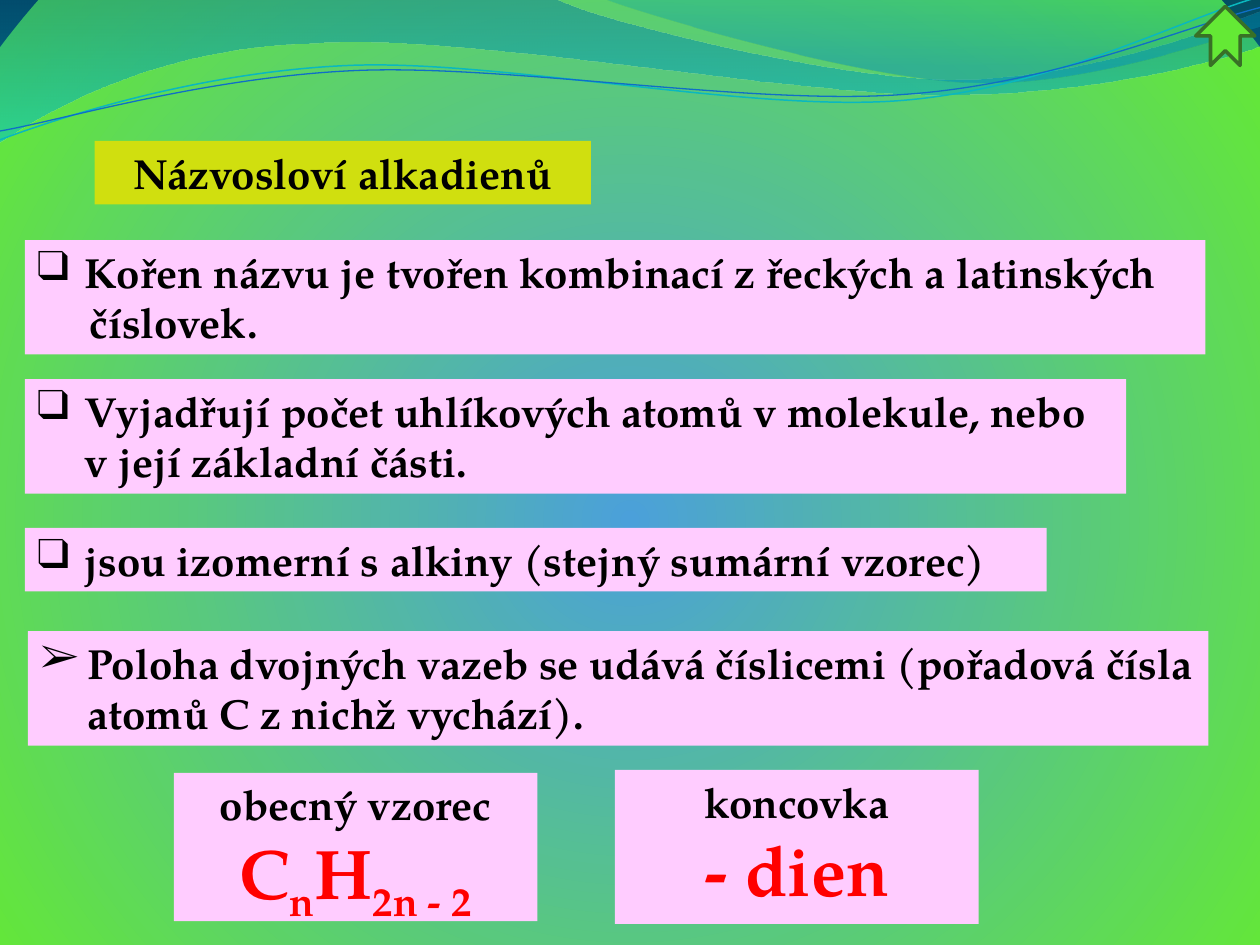
"""Builds the slide on the naming of alkadienes."""
from lxml import etree
from pptx import Presentation
from pptx.dml.color import RGBColor
from pptx.enum import shapes, text
from pptx.oxml import parse_xml
from pptx.oxml.ns import nsdecls, qn
from pptx.util import Pt

FONT = "TeX Gyre Pagella"
BLACK, RED, PINK, LIME, GREEN = "000000", "FF0000", "FFCCFF", "D0DF0F", "64E935"
INDENT = 27
SUBSCRIPT = -25000

TITLE = ("Názvosloví alkadienů", (54, 80.5, 283.7, 36.3))
RULES = [
    ("❑", ["Kořen názvu je tvořen kombinací z řeckých a latinských", "číslovek."],
     (14.2, 137.2, 674.6, 65.4)),
    ("❑", ["Vyjadřují počet uhlíkových atomů v molekule, nebo \vv její základní části."],
     (14.2, 216.7, 629.3, 65.4)),
    ("❑", ["jsou izomerní s alkiny (stejný sumární vzorec)"], (14.2, 301.7, 583.9, 36.3)),
    ("➢", ["Poloha dvojných vazeb se udává číslicemi (pořadová čísla atomů C z nichž vychází)."],
     (16, 360.7, 674.6, 65.4)),
]
FORMULAS = [
    ([[("obecný vzorec ", 24, BLACK, 0), ("C", 40, RED, 0), ("n", 40, RED, SUBSCRIPT),
       ("H", 40, RED, 0), ("2n - 2", 40, RED, SUBSCRIPT)]],
     (99.3, 441.6, 207.8, 84.8)),
    ([[("koncovka", 24, BLACK, 0)], [("- dien", 40, RED, 0)]], (351.4, 440, 207.8, 88)),
]
BACKDROP = [(0, "4BA0DA", 100), (100, GREEN, 100), (100, "052C44", 100)]
BANDS = [
    ([(0, 0), (4.4, -0.01), (4.76, 0.17, 6.64, 0.63, 7.58, 0.63),
      (8.53, 0.63, 9.58, 0.26, 10, 0.09), (10.01, 0.36),
      (9.83, 0.44, 8.7, 0.76, 7.46, 0.75), (6.22, 0.75, 3.82, 0.28, 2.57, 0.34),
      (1.29, 0.36, 0.46, 0.83, -0.01, 1.13)],
     [(0, "0074A1", 45), (100, "00C6CF", 55)]),
    ([(4.79, -0.01), (5.09, 0.11, 6.82, 0.62, 7.69, 0.65),
      (8.56, 0.69, 9.61, 0.32, 10, 0.21), (10, 0)],
     [(0, "00A1A9", 30), (80, "008BBF", 45)]),
]
WAVES = [
    ([(0, 1.11), (0.48, 0.93, 1.58, 0.57, 2.77, 0.52),
      (3.95, 0.47, 5.93, 0.89, 7.13, 0.8), (8.33, 0.71, 9.38, 0.15, 9.98, -0.02)],
     "0AB8BF", 0.85),
    ([(0, 1.04), (0.47, 0.96, 1.64, 0.61, 2.83, 0.56),
      (4.03, 0.51, 5.97, 0.84, 7.17, 0.75), (8.36, 0.67, 9.41, 0.21, 10, 0.06)],
     "0F6FC6", 0.75),
]


def rgb(value):
    return RGBColor.from_string(value)


def gradient(stops, direction):
    marks = "".join(
        f'<a:gs pos="{pos * 1000}"><a:srgbClr val="{colour}">'
        f'<a:alpha val="{opacity * 1000}"/></a:srgbClr></a:gs>'
        for pos, colour, opacity in stops)
    return parse_xml(f'<a:gradFill {nsdecls("a")} rotWithShape="1">'
                     f'<a:gsLst>{marks}</a:gsLst>{direction}</a:gradFill>')


def swap_fill(properties, new_fill):
    properties.replace(properties.find(qn("a:solidFill")), new_fill)


def add_curve(slide, outline, close):
    segments = [[round(value * 100) for value in segment] for segment in outline]
    ends = [segment[-2:] for segment in segments]
    left, top = (min(axis) for axis in zip(*ends))
    builder = slide.shapes.build_freeform(*ends[0], scale=Pt(0.72))
    builder.add_line_segments(ends[1:], close=close)
    curve = builder.convert_to_shape()
    curve.shadow.inherit = False
    for segment, line in zip(segments[1:], list(curve._element.iter(qn("a:lnTo")))):
        if len(segment) == 6:
            points = "".join(f'<a:pt x="{x - left}" y="{y - top}"/>'
                             for x, y in zip(segment[::2], segment[1::2]))
            line.getparent().replace(line, parse_xml(
                f'<a:cubicBezTo {nsdecls("a")}>{points}</a:cubicBezTo>'))
    return curve


def style(run, size=24, colour=BLACK):
    run.font.name, run.font.size, run.font.bold = FONT, Pt(size), True
    run.font.color.rgb = rgb(colour)


def set_up(box, fill, fit):
    box.fill.solid()
    box.fill.fore_color.rgb = rgb(fill)
    frame = box.text_frame
    frame.word_wrap = True
    frame.auto_size = fit
    frame.vertical_anchor = text.MSO_ANCHOR.TOP
    return frame


def add_panel(slide, place):
    box = slide.shapes.add_textbox(*map(Pt, place))
    return set_up(box, PINK, text.MSO_AUTO_SIZE.SHAPE_TO_FIT_TEXT)


def add_rule(slide, bullet, lines, place):
    frame = add_panel(slide, place)
    frame.text = "\n".join(lines)
    for number, paragraph in enumerate(frame.paragraphs):
        props = paragraph._p.get_or_add_pPr()
        props.set("marL", str(Pt(INDENT if number == 0 else INDENT + 3)))
        props.set("indent", str(Pt(-INDENT if number == 0 else 0)))
        if number == 0:
            etree.SubElement(props, qn("a:buFont")).set("typeface", FONT)
            etree.SubElement(props, qn("a:buChar")).set("char", bullet)
        for run in paragraph.runs:
            style(run)


def add_formula(slide, lines, place):
    frame = add_panel(slide, place)
    for number, parts in enumerate(lines):
        paragraph = frame.add_paragraph() if number else frame.paragraphs[0]
        paragraph.alignment = text.PP_ALIGN.CENTER
        for symbol, size, colour, baseline in parts:
            run = paragraph.add_run()
            run.text = symbol
            style(run, size, colour)
            if baseline:
                run._r.get_or_add_rPr().set("baseline", str(baseline))


def main():
    deck = Presentation()
    deck.slide_width, deck.slide_height = Pt(720), Pt(540)
    slide = deck.slides.add_slide(deck.slide_layouts[5])
    slide.background.fill.solid()
    swap_fill(slide._element.find(".//" + qn("p:bgPr")), gradient(
        BACKDROP, '<a:path path="circle">'
        '<a:fillToRect l="50000" t="55000" r="50000" b="45000"/></a:path>'))

    for outline, stops in BANDS:
        band = add_curve(slide, outline, True)
        band.fill.solid()
        band.line.fill.background()
        swap_fill(band._element.spPr, gradient(stops, '<a:lin ang="5400000" scaled="1"/>'))
    for outline, colour, width in WAVES:
        wave = add_curve(slide, outline, False)
        wave.fill.background()
        wave.line.color.rgb, wave.line.width = rgb(colour), Pt(width)

    heading, place = TITLE
    title = slide.shapes.title
    title.left, title.top, title.width, title.height = map(Pt, place)
    frame = set_up(title, LIME, text.MSO_AUTO_SIZE.NONE)
    frame.text = heading
    frame.paragraphs[0].alignment = text.PP_ALIGN.CENTER
    style(frame.paragraphs[0].runs[0])

    for rule in RULES:
        add_rule(slide, *rule)
    for formula in FORMULAS:
        add_formula(slide, *formula)

    arrow = slide.shapes.add_shape(shapes.MSO_SHAPE.NOTCHED_RIGHT_ARROW,
                                   Pt(683.3), Pt(3.6), Pt(33.8), Pt(33.8))
    arrow.rotation = 270
    arrow.shadow.inherit = False
    arrow.fill.solid()
    arrow.fill.fore_color.rgb = rgb(GREEN)
    arrow.line.color.rgb, arrow.line.width = rgb("387026"), Pt(2)
    deck.save("out.pptx")


if __name__ == "__main__":
    main()
